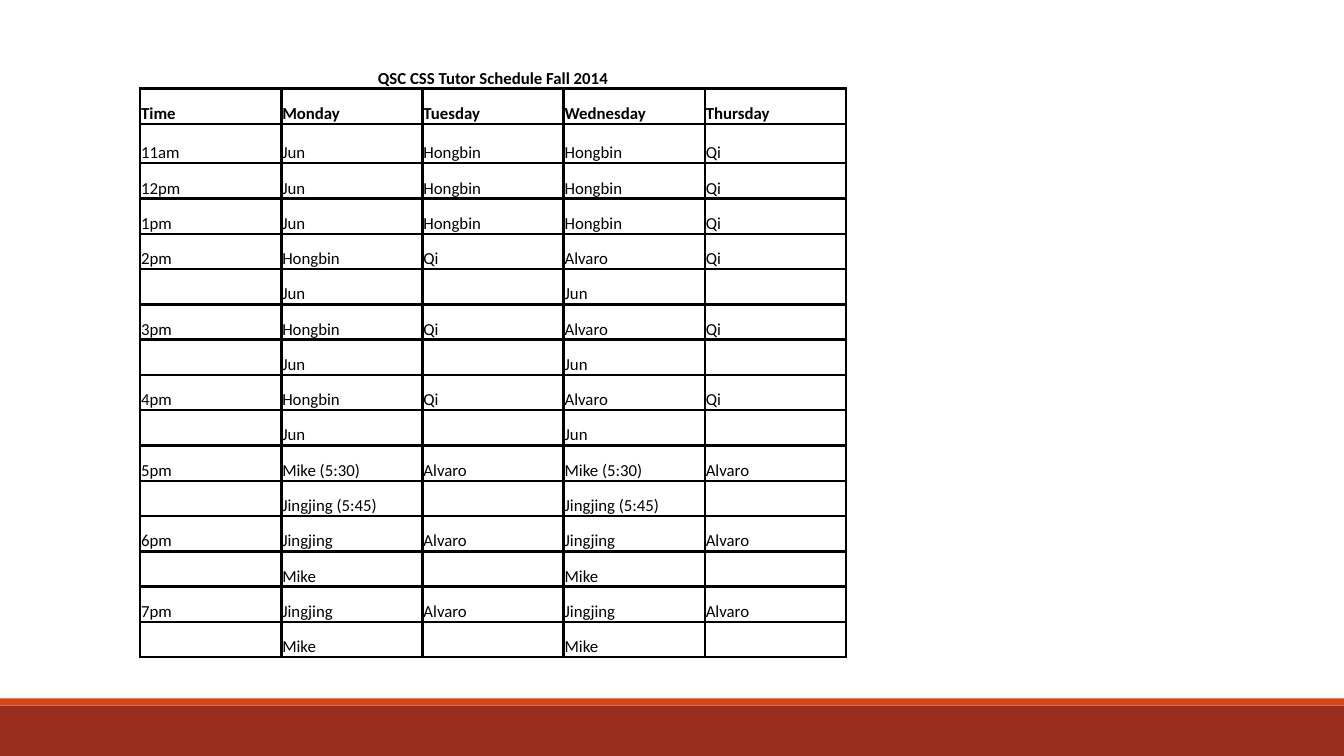
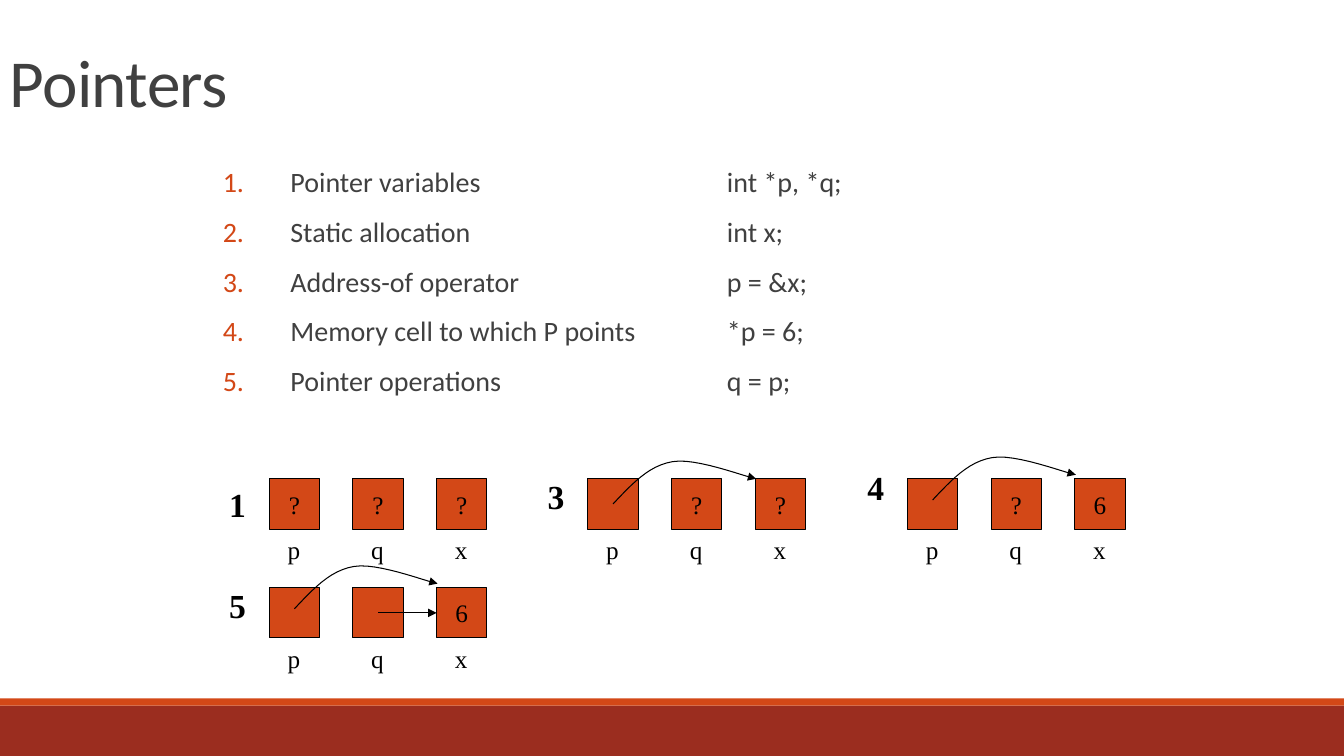
"""Build a tutor schedule slide and a slide on pointers."""
from lxml import etree
from pptx import Presentation
from pptx.dml.color import RGBColor
from pptx.enum.shapes import MSO_CONNECTOR, MSO_SHAPE
from pptx.enum.text import MSO_ANCHOR, PP_ALIGN
from pptx.oxml.ns import qn
from pptx.util import Emu, Inches, Pt

RECT = MSO_SHAPE.RECTANGLE
STRAIGHT = MSO_CONNECTOR.STRAIGHT
TOP, MIDDLE, BOTTOM = MSO_ANCHOR.TOP, MSO_ANCHOR.MIDDLE, MSO_ANCHOR.BOTTOM
LEFT, CENTER = PP_ALIGN.LEFT, PP_ALIGN.CENTER

W, H = 13.33, 7.5
BLACK, GREY, ORANGE, RED = "000000", "404040", "D34817", "9B2D1F"
SANS, SERIF = "Calibri", "Times New Roman"
NO_GRID = "{2D5ABB26-0587-4C30-8999-92F81FD0307C}"

BANDS = [(7, 0.5, RED), (6.93, 0.07, ORANGE)]

SCHEDULE_TITLE = "QSC CSS Tutor Schedule Fall 2014"
DAYS = ["Time", "Monday", "Tuesday", "Wednesday", "Thursday"]
MORNING = [["Jun"], ["Hongbin"], ["Hongbin"], ["Qi"]]
AFTERNOON = [["Hongbin", "Jun"], ["Qi"], ["Alvaro", "Jun"], ["Qi"]]
HANDOVER = [["Mike (5:30)", "Jingjing (5:45)"], ["Alvaro"]] * 2
EVENING = [["Jingjing", "Mike"], ["Alvaro"]] * 2
SHIFTS = [
    (["11am", "12pm", "1pm"], MORNING),
    (["2pm", "3pm", "4pm"], AFTERNOON),
    (["5pm"], HANDOVER),
    (["6pm", "7pm"], EVENING),
]
COL_W, ROW_H, FIRST_SHIFT_H = 1.4, 0.35, 0.39

STEPS = [
    ("Pointer variables", "int *p, *q;"),
    ("Static allocation", "int x;"),
    ("Address-of operator", "p = &x;"),
    ("Memory cell to which P points", "*p = 6;"),
    ("Pointer operations", "q = p;"),
]

VARIABLES = "pqx"
CELL, CELL_PITCH = 0.5, 0.83
STATES = [
    {"step": "1", "at": (2.67, 4.75), "values": "???", "rise": 0},
    {"step": "3", "at": (5.83, 4.75), "values": " ??", "rise": 0.08, "p_arrow": 0.25},
    {"step": "4", "at": (9, 4.75), "values": " ?6", "rise": 0.17, "p_arrow": 0.21},
    {"step": "5", "at": (2.67, 5.83), "values": "  6", "rise": 0.08, "p_arrow": 0.21,
     "q_arrow": True},
]
CURVE = [
    [(0, 0), (0.18, -0.19), (0.35, -0.38), (0.59, -0.42)],
    [(0.59, -0.42), (0.82, -0.46), (1.28, -0.28), (1.42, -0.25)],
]
CURVE_STEPS = 12


def rgb(value):
    """Turn a hex string into a colour."""
    return RGBColor.from_string(value)


def add(parent, tag, **attrs):
    """Append a drawing element with attributes."""
    return etree.SubElement(parent, qn(tag), attrs)


def style(p, size, color=BLACK, font=SANS, bold=False, align=LEFT):
    """Set the font and alignment of a paragraph."""
    p.alignment = align
    f = p.font
    f.size, f.name, f.bold = Pt(size), font, bold
    f.color.rgb = rgb(color)


def box(slide, x, y, w, h, fill, line=None):
    """Add a filled rectangle."""
    sp = slide.shapes.add_shape(RECT, Inches(x), Inches(y), Inches(w), Inches(h))
    sp.shadow.inherit = False
    sp.fill.solid()
    sp.fill.fore_color.rgb = rgb(fill)
    if line:
        sp.line.color.rgb = rgb(line)
        sp.line.width = Pt(0.75)
    else:
        sp.line.fill.background()
    return sp


def text_box(slide, x, y, w, h, anchor=TOP, wrap=True):
    """Add an empty text box and return its frame."""
    tf = slide.shapes.add_textbox(Inches(x), Inches(y), Inches(w), Inches(h)).text_frame
    tf.word_wrap, tf.vertical_anchor = wrap, anchor
    return tf


def label(slide, text, x, y, w, h, size, bold=False):
    """Add a centred serif label."""
    p = text_box(slide, x, y, w, h, wrap=False).paragraphs[0]
    p.text = text
    style(p, size, font=SERIF, bold=bold, align=CENTER)


def new_slide(prs):
    """Add a blank slide with the footer bands."""
    slide = prs.slides.add_slide(prs.slide_layouts[6])
    for top, height, color in BANDS:
        box(slide, 0, top, W, height, color)
    return slide


def arrow_line(sp):
    """Give a line its colour, width and arrowhead."""
    sp.line.color.rgb = rgb(BLACK)
    sp.line.width = Pt(0.75)
    add(sp.line._get_or_add_ln(), "a:tailEnd", type="triangle", w="med", len="med")


def curved_arrow(slide, x, y):
    """Draw the curved arrow from a point."""
    points = []
    for curve in CURVE:
        for i in range(1, CURVE_STEPS + 1):
            t = i / CURVE_STEPS
            weights = ((1 - t) ** 3, 3 * t * (1 - t) ** 2, 3 * t * t * (1 - t), t ** 3)
            dx, dy = (sum(k * v for k, v in zip(weights, axis)) for axis in zip(*curve))
            points.append((Inches(x + dx), Inches(y + dy)))
    builder = slide.shapes.build_freeform(Inches(x), Inches(y))
    builder.add_line_segments(points, close=False)
    sp = builder.convert_to_shape()
    sp.shadow.inherit = False
    sp.fill.background()
    arrow_line(sp)


def straight_arrow(slide, x, y, target):
    """Draw a straight arrow to the left side of a box."""
    start = Inches(x), Inches(y)
    sp = slide.shapes.add_connector(STRAIGHT, *start, target.left, start[1])
    sp.end_connect(target, 1)
    add(sp._element.spPr, "a:effectLst")
    arrow_line(sp)


def schedule_rows():
    """Yield the text and border sides of every table row."""
    yield [SCHEDULE_TITLE] + [""] * 4, "B"
    yield DAYS, "LRTB"
    for hours, tutors in SHIFTS:
        lines = max(map(len, tutors))
        for hour in hours:
            cells = [[hour]] + tutors
            for i in range(lines):
                sides = "LR" + "T" * (i == 0) + "B" * (i == lines - 1)
                yield [c[i] if i < len(c) else "" for c in cells], sides


def fill_cell(cell, text, sides, bold, align):
    """Write one table cell and draw its borders."""
    cell.margin_left = cell.margin_right = cell.margin_top = Inches(0.01)
    cell.margin_bottom = Emu(0)
    cell.vertical_anchor = BOTTOM
    p = cell.text_frame.paragraphs[0]
    p.text = text
    style(p, 12, bold=bold, align=align)
    tc_pr = cell._tc.get_or_add_tcPr()
    for side in sides:
        ln = add(tc_pr, f"a:ln{side}", w=str(Pt(2)))
        add(add(ln, "a:solidFill"), "a:srgbClr", val=BLACK)
    cell.fill.background()


def schedule_slide(prs):
    """Build the slide with the schedule table."""
    slide = new_slide(prs)
    rows = list(schedule_rows())
    frame = slide.shapes.add_table(len(rows), len(DAYS), Inches(1.39), Inches(0.53),
                                   Inches(COL_W * len(DAYS)), Inches(ROW_H * len(rows)))
    table = frame.table
    table.first_row = table.horz_banding = False
    table._tbl.tblPr.find(qn("a:tableStyleId")).text = NO_GRID
    for col in table.columns:
        col.width = Inches(COL_W)
    for r, (texts, sides) in enumerate(rows):
        table.rows[r].height = Inches(FIRST_SHIFT_H if r == 2 else ROW_H)
        for c, text in enumerate(texts):
            fill_cell(table.cell(r, c), text, sides, r < 2, LEFT if r else CENTER)
    table.cell(0, 0).merge(table.cell(0, len(DAYS) - 1))


def add_steps(slide):
    """Add the numbered steps with their code at a tab stop."""
    tf = text_box(slide, 2.21, 1.62, 9.08, 2.6)
    tf.margin_left = tf.margin_right = 0
    for i, step in enumerate(STEPS):
        p = tf.add_paragraph() if i else tf.paragraphs[0]
        p.text = "\t".join(step)
        p.line_spacing, p.space_before, p.space_after = 0.9, Pt(12), Pt(2)
        p_pr = p._p.get_or_add_pPr()
        p_pr.set("marL", str(Inches(0.67)))
        p_pr.set("indent", str(-Inches(0.67)))
        add(add(p_pr, "a:buClr"), "a:srgbClr", val=ORANGE)
        add(p_pr, "a:buFont", typeface="+mj-lt")
        add(p_pr, "a:buAutoNum", type="arabicPeriod")
        add(add(p_pr, "a:tabLst"), "a:tab", pos=str(Inches(5)), algn="l")
        style(p, 20, GREY)


def add_state(slide, state):
    """Draw the memory cells of one step with their arrows."""
    x, y = state["at"]
    cells = []
    for i, (name, value) in enumerate(zip(VARIABLES, state["values"])):
        left = x + i * CELL_PITCH
        sp = box(slide, left, y, CELL, CELL, ORANGE, BLACK)
        cells.append(sp)
        if value.strip():
            tf = sp.text_frame
            tf.word_wrap, tf.vertical_anchor = False, MIDDLE
            tf.text = value
            style(tf.paragraphs[0], 18, font=SERIF, align=CENTER)
        label(slide, name, left + 0.08, y + CELL, 0.33, 0.4, 18)
    if "p_arrow" in state:
        curved_arrow(slide, x + CELL / 2, y + state["p_arrow"])
    if "q_arrow" in state:
        straight_arrow(slide, x + CELL_PITCH + CELL / 2, y + CELL / 2, cells[2])
    label(slide, state["step"], x - 0.5, y - state["rise"], 0.37, 0.5, 24, True)


def pointers_slide(prs):
    """Build the slide on pointers."""
    slide = new_slide(prs)
    p = text_box(slide, 0, 0, 8.5, 1.25, BOTTOM).paragraphs[0]
    p.text = "Pointers"
    p.line_spacing = 0.85
    style(p, 48, GREY)
    p.font._rPr.set("spc", "-50")
    add_steps(slide)
    for state in STATES:
        add_state(slide, state)


def main():
    """Build and save the presentation."""
    prs = Presentation()
    prs.slide_width, prs.slide_height = Inches(W), Inches(H)
    schedule_slide(prs)
    pointers_slide(prs)
    prs.save("out.pptx")


if __name__ == "__main__":
    main()
